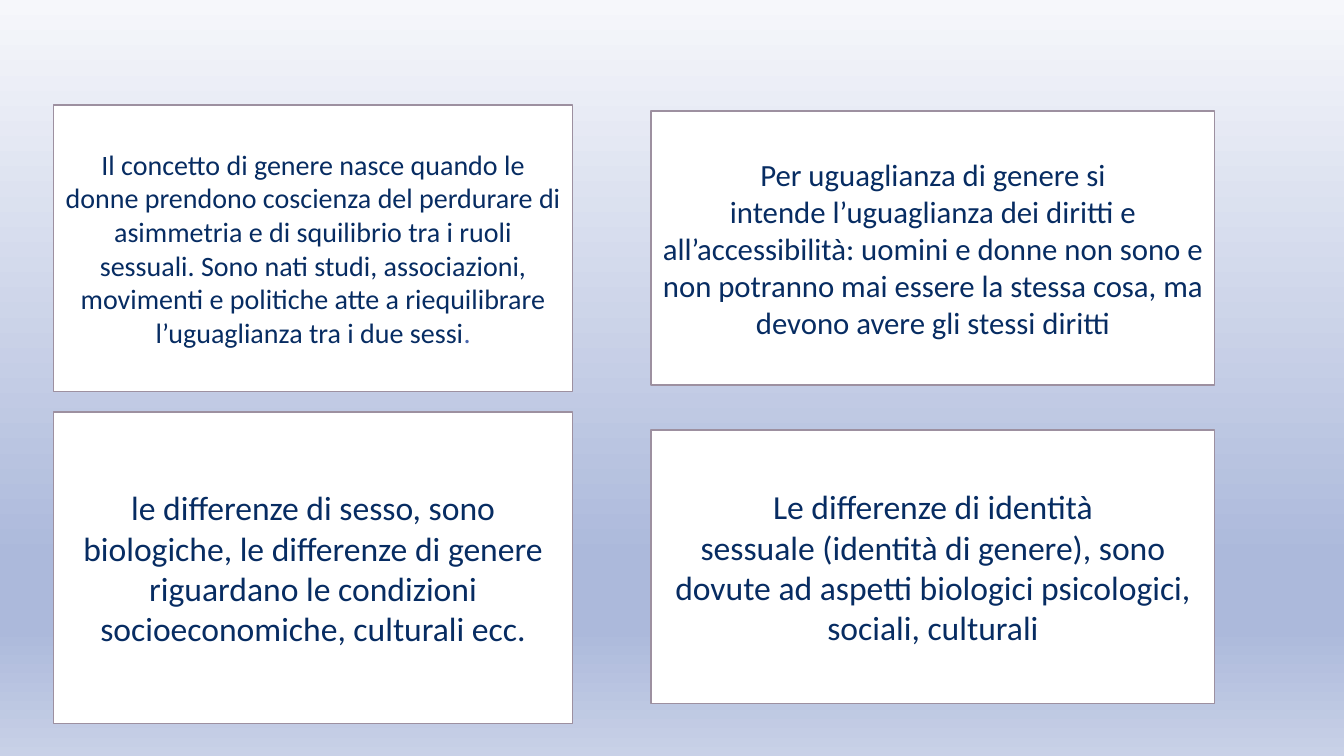
from dataclasses import dataclass

from lxml import etree
from pptx import Presentation
from pptx import util as u
from pptx.dml.color import RGBColor
from pptx.enum import shapes, text
from pptx.oxml import ns

WIDE, HIGH = u.Inches(13.33), u.Inches(7.5)
FONT = "Calibri"
TIE = chr(160)  # no-break space, typed as ~ in the card texts
HUES = {
    "card": "FFFFFF",
    "edge": "9D90A0",
    "ink": "072C62",
    "dot": "4A66AC",
    "sky": "F6F7FB",
    "haze": "ACB9DB",
    "base": "C8D1E7",
}
STOPS = ((0, "sky"), (74, "haze"), (83, "haze"), (100, "base"))


@dataclass(frozen=True)
class Column:
    """Left edge and width, in percent of the slide's width."""
    left: float
    width: float


@dataclass(frozen=True)
class Card:
    """Top and height are in percent of the slide's height."""
    column: Column
    top: float
    height: float
    size: int
    words: str
    dot: str = ""


LEFT = Column(3.98, 38.63)
RIGHT = Column(48.45, 41.93)
CARDS = (
    Card(LEFT, 54.5, 41.2, 24,
         "le~differenze di sesso, sono biologiche, le differenze di genere "
         "riguardano le condizioni socioeconomiche, culturali ecc."),
    Card(RIGHT, 56.9, 36.13, 24,
         "Le~differenze di identità sessuale~(identità di genere), sono "
         "dovute ad aspetti biologici psicologici, sociali, culturali"),
    Card(LEFT, 13.9, 37.87, 20,
         "Il~concetto di genere nasce quando le donne prendono coscienza del "
         "perdurare di asimmetria e di squilibrio tra i ruoli sessuali.~Sono "
         "nati studi, associazioni, movimenti e politiche atte a "
         "riequilibrare l’uguaglianza tra i due sessi", "."),
    Card(RIGHT, 14.67, 36.27, 22,
         "Per~uguaglianza di genere si intende~l’uguaglianza dei diritti e "
         "all’accessibilità: uomini e donne non sono e non potranno mai "
         "essere la stessa cosa, ma devono avere gli stessi diritti"),
)


def hue(name: str) -> RGBColor:
    return RGBColor.from_string(HUES[name])


def share(whole: int, part: float) -> int:
    return round(whole * part / 100)


def paint_back(slide) -> None:
    fill = slide.background.fill
    fill.gradient()
    fill.gradient_angle = 270
    stops = slide.element.xpath(".//p:bg//a:gsLst")[0]
    for old in list(stops):
        stops.remove(old)
    for place, name in STOPS:
        stop = etree.SubElement(stops, ns.qn("a:gs"), pos=str(place * 1000))
        etree.SubElement(stop, ns.qn("a:srgbClr"), val=HUES[name])


def draw_card(slide, card: Card) -> None:
    box = slide.shapes.add_shape(
        shapes.MSO_SHAPE.RECTANGLE,
        share(WIDE, card.column.left), share(HIGH, card.top),
        share(WIDE, card.column.width), share(HIGH, card.height))
    box.shadow.inherit = False
    box.fill.solid()
    box.fill.fore_color.rgb = hue("card")
    box.line.color.rgb = hue("edge")
    box.line.width = u.Pt(1)

    frame = box.text_frame
    frame.word_wrap = True
    frame.vertical_anchor = text.MSO_ANCHOR.MIDDLE
    para = frame.paragraphs[0]
    para.alignment = text.PP_ALIGN.CENTER
    para.font.name = FONT
    para.font.size = u.Pt(card.size)
    for words, name in ((card.words, "ink"), (card.dot, "dot")):
        if words:
            run = para.add_run()
            run.text = words.replace("~", TIE)
            run.font.color.rgb = hue(name)


def main() -> None:
    deck = Presentation()
    deck.slide_width, deck.slide_height = WIDE, HIGH
    slide = deck.slides.add_slide(deck.slide_layouts.get_by_name("Blank"))
    paint_back(slide)
    for card in CARDS:
        draw_card(slide, card)
    deck.save("out.pptx")


if __name__ == "__main__":
    main()
